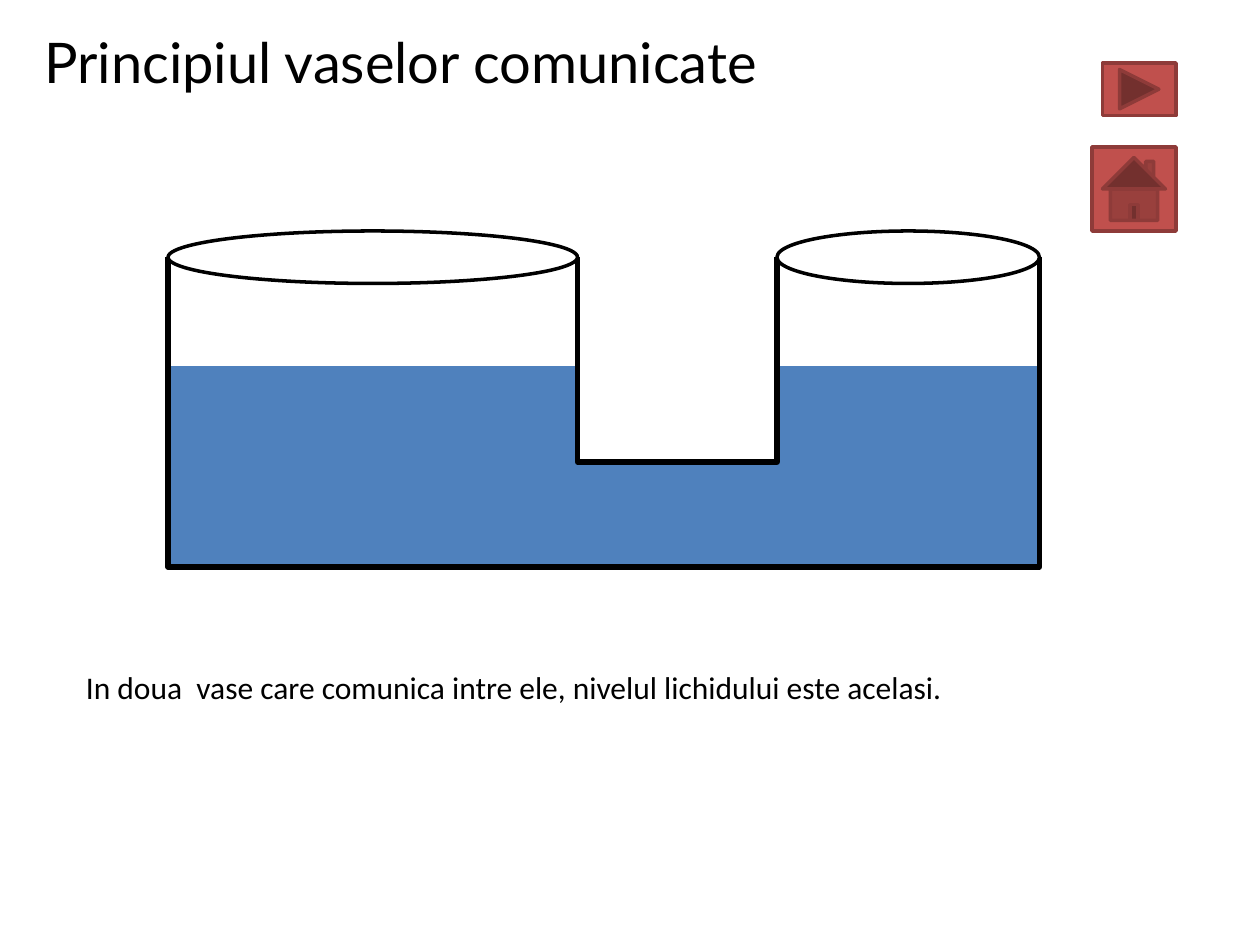
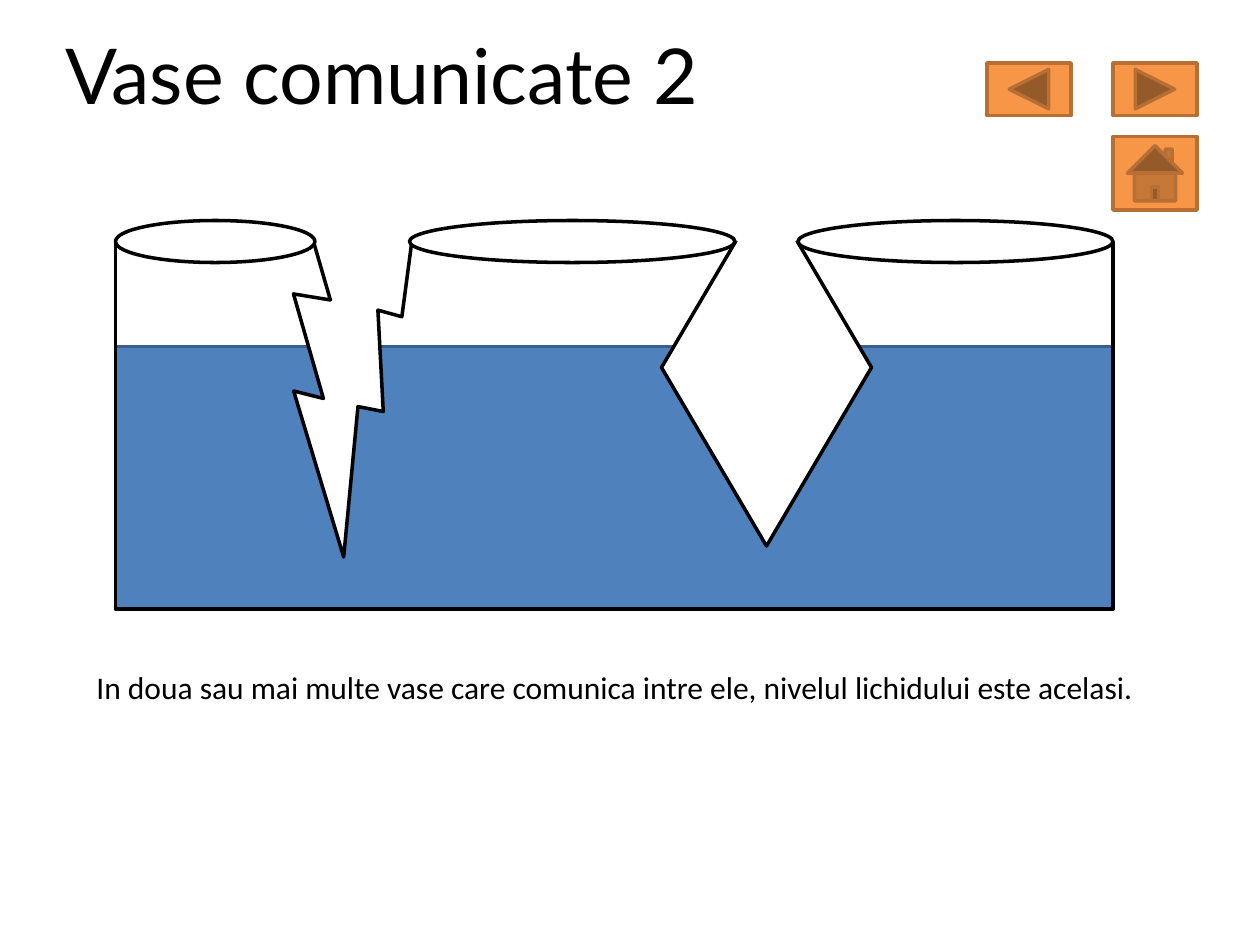
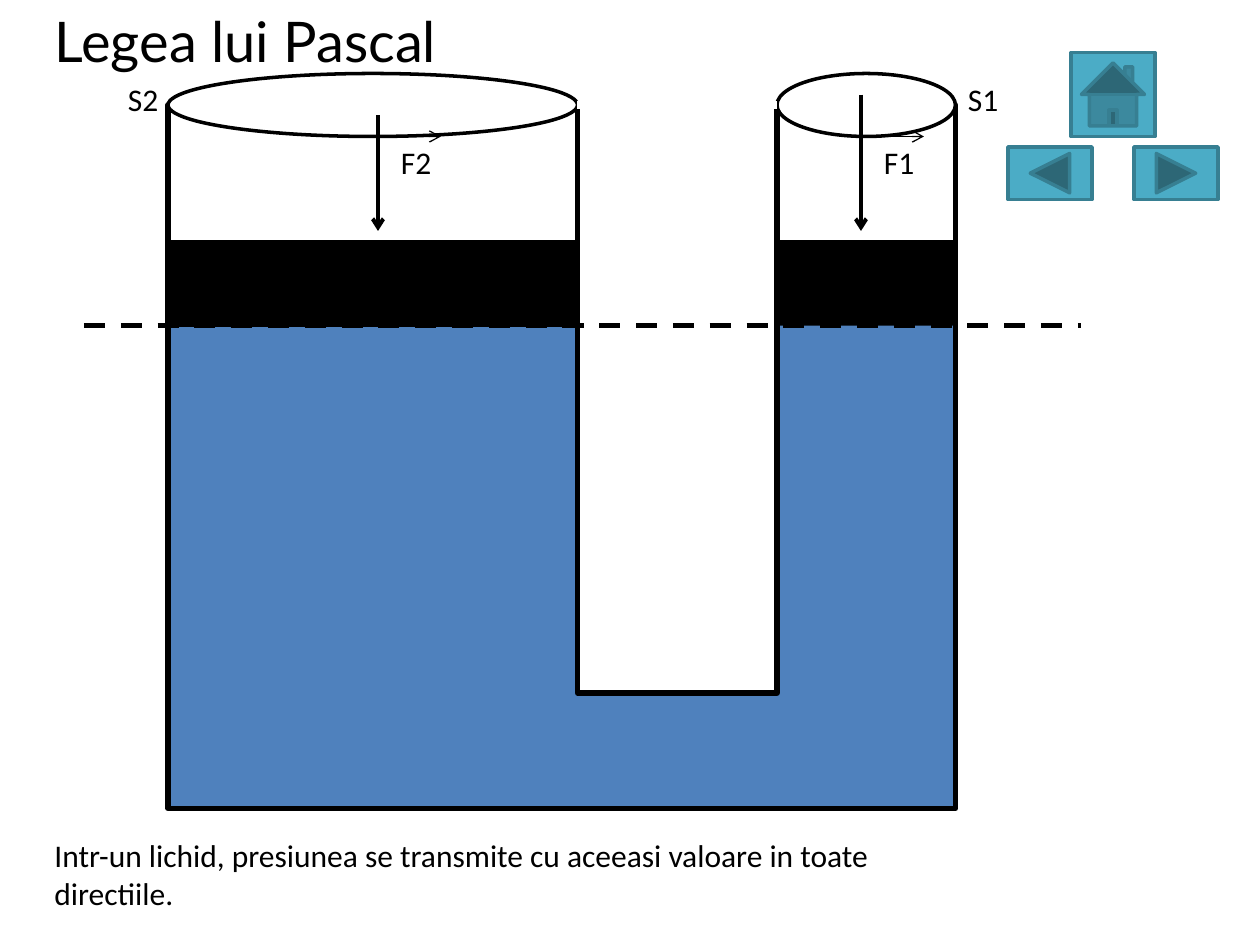
"""Builds three slides on communicating vessels and Pascal's law."""
from lxml import etree
from pptx import Presentation
from pptx.dml.color import RGBColor
from pptx.enum.dml import MSO_LINE
from pptx.enum.shapes import MSO_CONNECTOR, MSO_SHAPE
from pptx.enum.text import MSO_ANCHOR, MSO_AUTO_SIZE, PP_ALIGN
from pptx.oxml.ns import qn
from pptx.util import Cm, Pt

STRAIGHT = MSO_CONNECTOR.STRAIGHT
DASH = MSO_LINE.DASH
LEFT = PP_ALIGN.LEFT
TOP = MSO_ANCHOR.TOP
GROW = MSO_AUTO_SIZE.SHAPE_TO_FIT_TEXT
SHAPES = {
    "rectangle": MSO_SHAPE.RECTANGLE,
    "ellipse": MSO_SHAPE.OVAL,
    "diamond": MSO_SHAPE.FLOWCHART_DECISION,
    "bolt": MSO_SHAPE.LIGHTNING_BOLT,
    "next": MSO_SHAPE.ACTION_BUTTON_FORWARD_OR_NEXT,
    "previous": MSO_SHAPE.ACTION_BUTTON_BACK_OR_PREVIOUS,
    "home": MSO_SHAPE.ACTION_BUTTON_HOME,
}

BLACK, WHITE, WATER, WATER_EDGE = "000000", "FFFFFF", "4F81BD", "3A5F8C"
TITLE_FONT, BODY_FONT, BODY_SIZE = "Lato", "Calibri", 18
GRID_STEP = 2.54 / 12

SHAPE_STYLES = {
    "water": dict(fill=WATER),
    "water lined": dict(fill=WATER, line=WATER, width=2),
    "water edged": dict(fill=WATER, line=WATER_EDGE, width=2),
    "wall": dict(line=BLACK, width=3),
    "thin wall": dict(line=BLACK, width=2),
    "gap": dict(fill=WHITE, line=BLACK, width=3),
    "rim": dict(fill=WHITE, line=BLACK, width=2),
    "piston": dict(fill=BLACK, line=BLACK, width=2),
    "cover": dict(fill=WHITE),
    "red": dict(fill="C0504D", line="8E3B39", width=2),
    "orange": dict(fill="F79646", line="B76F34", width=2),
    "teal": dict(fill="4BACC6", line="377F92", width=2),
}
LINE_STYLES = {
    "eraser": dict(color=WHITE, width=6),
    "thin eraser": dict(color=WHITE, width=4.5),
    "level": dict(color=BLACK, width=3, dash=DASH),
    "force": dict(color=BLACK, width=2.25, arrow=True),
    "vector": dict(color=BLACK, width=0.75, arrow=True),
}

# Boxes are (left, top, width, height) and lines (x1, y1, x2, y2) in grid steps.
SLIDES = [
    dict(
        title=("Principiul vaselor comunicate", (3, 2, 91, 7.7), 32),
        parts=[
            ("rectangle", "water lined", (16, 35, 83, 19)),
            ("rectangle", "wall", (16, 24, 83, 30)),
            ("rectangle", "gap", (55, 24, 19, 20)),
            ("line", "eraser", (14, 24, 102, 24)),
            ("ellipse", "rim", (16, 22, 39, 5)),
            ("ellipse", "rim", (74, 22, 25, 5)),
        ],
        forces=[],
        texts=[("In doua  vase care comunica intre ele, nivelul lichidului este acelasi.",
                (7, 63, 106, 4.8))],
        button_style="red",
        buttons=[("next", (105, 6, 7, 5)), ("home", (104, 14, 8, 8))],
    ),
    dict(
        title=("Vase comunicate 2", (5, 2, 77, 10.1), 44),
        parts=[
            ("rectangle", "water edged", (11, 33, 95, 25)),
            ("rectangle", "thin wall", (11, 22, 95, 36)),
            ("diamond", "rim", (56, 25, 34, 20), 90),
            ("bolt", "rim", (19.44, 18.84, 25.68, 29.4), 39.8),
            ("rectangle", "cover", (5, 12, 102, 11)),
            ("ellipse", "rim", (11, 21, 19, 4)),
            ("ellipse", "rim", (39, 21, 31, 4)),
            ("ellipse", "rim", (76, 21, 30, 4)),
        ],
        forces=[],
        texts=[("In doua sau mai multe vase care comunica intre ele, nivelul lichidului este acelasi.",
                (8, 63, 106, 4.8))],
        button_style="orange",
        buttons=[("next", (106, 6, 8, 5)), ("previous", (94, 6, 8, 5)),
                 ("home", (106, 13, 8, 7))],
    ),
    dict(
        title=("Legea lui Pascal", (4, 0, 50, 7.7), 32),
        parts=[
            ("line", "eraser", (15, 10, 103, 10)),
            ("rectangle", "piston", (74, 23, 17, 8)),
            ("rectangle", "water", (16, 31, 39, 57)),
            ("rectangle", "water", (54, 64, 21, 13)),
            ("rectangle", "water", (74, 31, 17, 46)),
            ("rectangle", "cover", (2, 77, 107, 13)),
            ("rectangle", "wall", (16, 10, 75, 67)),
            ("rectangle", "piston", (16, 23, 40, 8)),
            ("rectangle", "gap", (55, 10, 19, 56)),
            ("ellipse", "rim", (74, 7, 17, 6)),
            ("ellipse", "rim", (16, 7, 39, 6)),
            ("line", "thin eraser", (55, 10, 74, 10)),
            ("line", "level", (8, 31, 103, 31)),
        ],
        forces=[("F2", 36, 11), ("F1", 82, 9)],
        texts=[
            ("S2", (11, 7, 9, 8.5)),
            ("S1", (91, 7, 9, 8.5)),
            ("Intr-un lichid, presiunea se transmite cu aceeasi valoare in toate directiile.",
             (4, 79, 80, 8.5)),
        ],
        button_style="teal",
        buttons=[("next", (108, 14, 8, 5)), ("previous", (96, 14, 8, 5)),
                 ("home", (102, 5, 8, 8))],
    ),
]


def rgb(value):
    return RGBColor.from_string(value)


def lengths(steps):
    return [Cm(step * GRID_STEP) for step in steps]


def write_text(shape, text, font, size):
    frame = shape.text_frame
    frame.text = text
    frame.word_wrap = True
    frame.auto_size = GROW
    frame.vertical_anchor = TOP
    paragraph = frame.paragraphs[0]
    paragraph.alignment = LEFT
    style = paragraph.runs[0].font
    style.name, style.size = font, Pt(size)
    style.color.rgb = rgb(BLACK)


def set_title(slide, text, box, size):
    title = slide.shapes.title
    title.left, title.top, title.width, title.height = lengths(box)
    write_text(title, text, TITLE_FONT, size)


def add_text(shapes, text, box):
    write_text(shapes.add_textbox(*lengths(box)), text, BODY_FONT, BODY_SIZE)


def add_outline(shapes, kind, box, rotation=0, fill=None, line=None, width=0):
    shape = shapes.add_shape(SHAPES[kind], *lengths(box))
    shape.shadow.inherit = False
    shape.rotation = rotation
    if fill:
        shape.fill.solid()
        shape.fill.fore_color.rgb = rgb(fill)
    else:
        shape.fill.background()
    if line:
        shape.line.color.rgb = rgb(line)
        shape.line.width = Pt(width)
    else:
        shape.line.fill.background()


def add_line(shapes, ends, color, width, dash=None, arrow=False):
    connector = shapes.add_connector(STRAIGHT, *lengths(ends))
    connector.line.color.rgb = rgb(color)
    connector.line.width = Pt(width)
    if dash:
        connector.line.dash_style = dash
    properties = connector._element.spPr
    if arrow:
        etree.SubElement(properties.find(qn("a:ln")), qn("a:tailEnd"), type="arrow")
    etree.SubElement(properties, qn("a:effectLst"))


def add_force(slide, label, x, top):
    shapes = slide.shapes.add_group_shape().shapes
    add_line(shapes, (x, top, x, 22), **LINE_STYLES["force"])
    add_text(shapes, label, (x + 1, 13, 7, 5))
    add_line(shapes, (x + 2, 13, x + 6, 13), **LINE_STYLES["vector"])


def build_slide(presentation, content):
    slide = presentation.slides.add_slide(presentation.slide_layouts[5])
    set_title(slide, *content["title"])
    for kind, style, place, *rotation in content["parts"]:
        if kind == "line":
            add_line(slide.shapes, place, **LINE_STYLES[style])
        else:
            add_outline(slide.shapes, kind, place, *rotation, **SHAPE_STYLES[style])
    for force in content["forces"]:
        add_force(slide, *force)
    for text, box in content["texts"]:
        add_text(slide.shapes, text, box)
    for kind, box in content["buttons"]:
        add_outline(slide.shapes, kind, box, **SHAPE_STYLES[content["button_style"]])


def main():
    presentation = Presentation()
    presentation.slide_width, presentation.slide_height = Cm(25.4), Cm(19.05)
    for content in SLIDES:
        build_slide(presentation, content)
    presentation.save("out.pptx")


if __name__ == "__main__":
    main()
